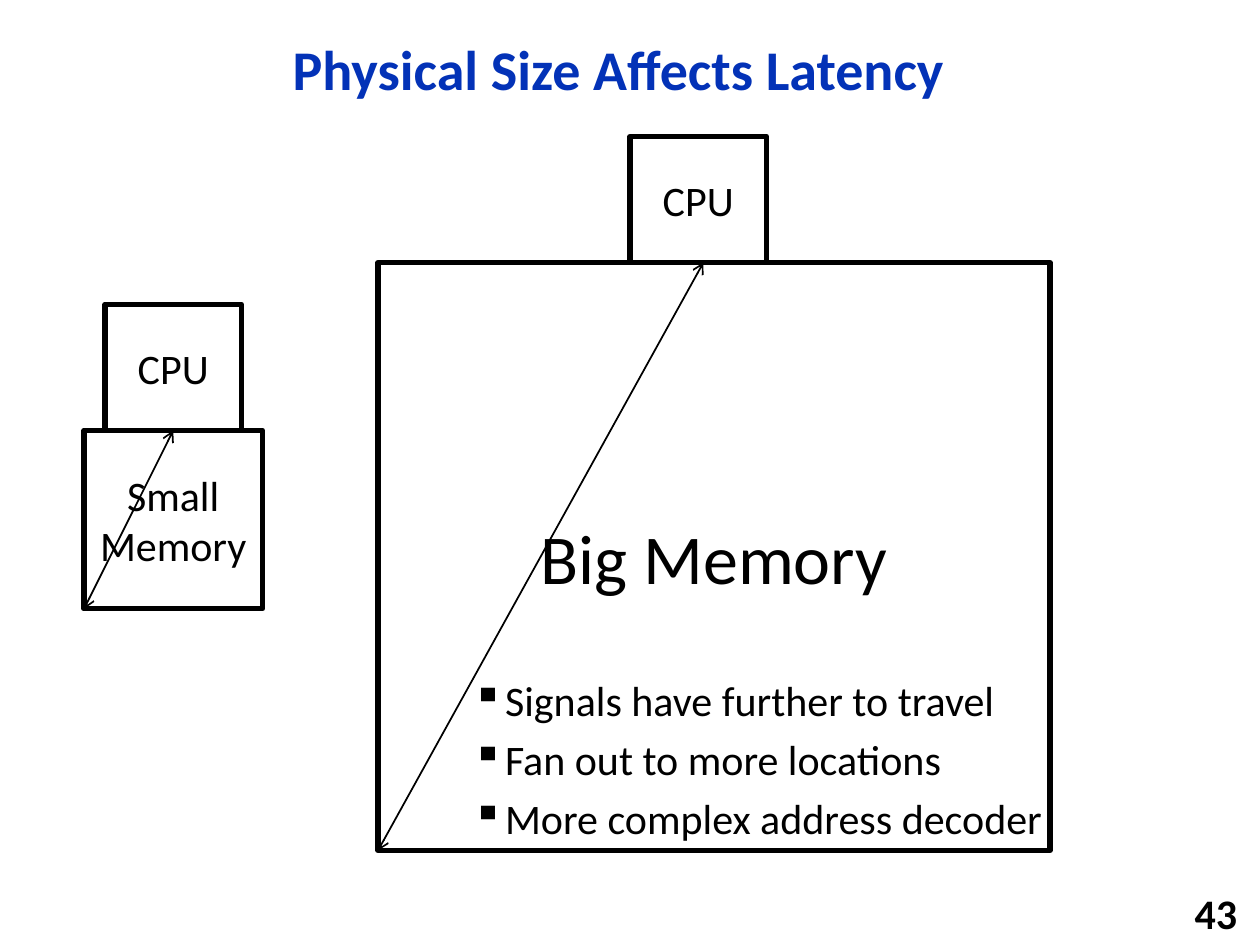
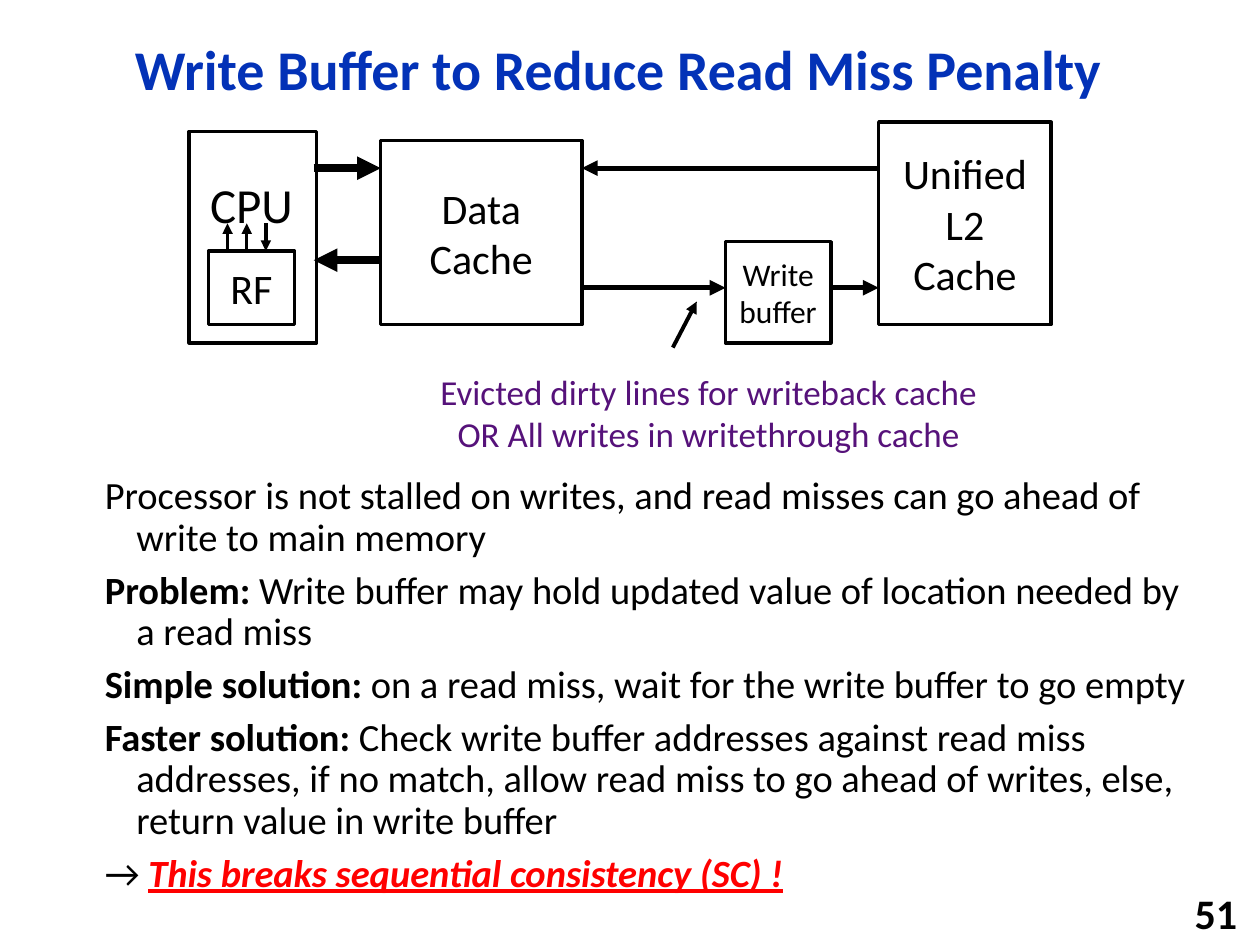
from dataclasses import dataclass

from lxml import etree
from pptx import Presentation
from pptx import util as u
from pptx.dml.color import RGBColor
from pptx.enum import shapes, text
from pptx.oxml.ns import qn


@dataclass(frozen=True)
class Theme:
    font: str = "Calibri"
    ink: str = "000000"
    paper: str = "FFFFFF"
    title: str = "0332B7"
    note: str = "56127A"
    alert: str = "FF0000"
    title_size: int = 32
    label_size: int = 24
    body_size: int = 22
    note_size: int = 20


@dataclass(frozen=True)
class Grid:
    """Maps columns and rows to lengths; origin and steps are in inches."""
    left: float
    top: float
    col: float
    row: float

    def point(self, col, row):
        return u.Inches(self.left + col * self.col), u.Inches(self.top + row * self.row)

    def box(self, col, row, cols, rows):
        return (*self.point(col, row), u.Inches(cols * self.col), u.Inches(rows * self.row))


THEME = Theme()
PAGE = Grid(0, 0, 1 / 12, 1 / 12)
DIAGRAM = Grid(1.35, 0.97, 0.076, 0.073)

CENTER, RIGHT = text.PP_ALIGN.CENTER, text.PP_ALIGN.RIGHT
TOP, MIDDLE = text.MSO_ANCHOR.TOP, text.MSO_ANCHOR.MIDDLE

READ_MISS_POINTS = [
    ("", "Processor is not stalled on writes, and read misses can go ahead of "
         "write to main memory"),
    ("Problem:", " Write buffer may hold updated value of location needed by a read miss"),
    ("Simple solution: ", "on a read miss, wait for the write buffer to go empty"),
    ("Faster solution:", " Check write buffer addresses against read miss addresses, "
                         "if no match, allow read miss to go ahead of writes, else, "
                         "return value in write buffer"),
]


def style(font, size, color=THEME.ink, bold=False):
    font.name = THEME.font
    font.size = u.Pt(size)
    font.bold = bold
    font.color.rgb = RGBColor.from_string(color)


def write(frame, content, size, color=THEME.ink, bold=False, align=None, anchor=TOP):
    """Fill a text frame, one paragraph for each line of content."""
    frame.text = content
    frame.word_wrap = True
    frame.auto_size = text.MSO_AUTO_SIZE.NONE
    frame.vertical_anchor = anchor
    for paragraph in frame.paragraphs:
        paragraph.alignment = align
        style(paragraph.font, size, color, bold)


def label(parent, place, content, size, **look):
    frame = parent.add_textbox(*place).text_frame
    write(frame, content, size, **look)
    return frame


def block(parent, place, content="", size=THEME.label_size, weight=2):
    """A white rectangle with a black outline and a centred name."""
    rect = parent.add_shape(shapes.MSO_SHAPE.RECTANGLE, *place)
    rect.shadow.inherit = False
    rect.fill.solid()
    rect.fill.fore_color.rgb = RGBColor.from_string(THEME.paper)
    rect.line.color.rgb = RGBColor.from_string(THEME.ink)
    rect.line.width = u.Pt(weight)
    write(rect.text_frame, content, size, align=CENTER, anchor=MIDDLE)


def arrow(parent, start, end, weight, tip="triangle", both_ends=False):
    line = parent.add_connector(shapes.MSO_CONNECTOR.STRAIGHT, *start, *end)
    line.line.color.rgb = RGBColor.from_string(THEME.ink)
    line.line.width = u.Pt(weight)
    properties = line._element.spPr
    outline = properties.find(qn("a:ln"))
    for name in ("a:headEnd", "a:tailEnd") if both_ends else ("a:tailEnd",):
        etree.SubElement(outline, qn(name), type=tip)
    etree.SubElement(properties, qn("a:effectLst"))


def hang(paragraph, indent, before, bullet=None):
    """Hanging indent in inches, space before in points, optional bullet."""
    paragraph.space_before = u.Pt(before)
    properties = paragraph._p.get_or_add_pPr()
    properties.set("marL", str(u.Inches(indent)))
    properties.set("indent", str(-u.Inches(indent)))
    if bullet:
        etree.SubElement(properties, qn("a:buChar"), char=bullet)
        # Bullets come before the default run properties in the schema.
        defaults = properties.find(qn("a:defRPr"))
        if defaults is not None:
            properties.append(defaults)


def titled_slide(deck, title, number):
    slide = deck.slides.add_slide(deck.slide_layouts[5])
    heading = slide.shapes.title
    heading.left, heading.top, heading.width, heading.height = PAGE.box(11, 2, 95.8, 9.8)
    write(heading.text_frame, title, THEME.title_size, THEME.title, True, CENTER, MIDDLE)
    heading.text_frame.paragraphs[0].line_spacing = 0.9
    label(slide.shapes, PAGE.box(94, 85, 25, 3.8), number, THEME.label_size,
          bold=True, align=RIGHT, anchor=MIDDLE)
    return slide


def memory_system(slide, name, size, memory, cpu_col, port_col):
    """A memory with a CPU on top and its longest signal run marked."""
    col, row, _, rows = memory
    group = slide.shapes.add_group_shape().shapes
    block(group, PAGE.box(*memory), name, size, weight=3)
    arrow(group, PAGE.point(col, row + rows), PAGE.point(port_col, row), 1,
          tip="arrow", both_ends=True)
    block(group, PAGE.box(cpu_col, row - 12, 13, 12), "CPU", weight=3)


def latency_slide(deck):
    slide = titled_slide(deck, "Physical Size Affects Latency", "43")
    memory_system(slide, "Small Memory", THEME.label_size, (8, 41, 17, 17), 10, 16.5)
    memory_system(slide, "Big Memory", 40, (36, 25, 64, 56), 60, 67)
    reasons = label(slide.shapes, PAGE.box(43.8, 63.6, 58.4, 17.4),
                    "Signals have further to travel\nFan out to more locations\n"
                    "More complex address decoder", THEME.label_size)
    for reason in reasons.paragraphs:
        hang(reason, 0.26, 5, bullet="▪")


def cache_diagram(slide):
    group = slide.shapes.add_group_shape().shapes
    block(group, DIAGRAM.box(2, 1, 13.3, 23))
    for place, name, size in [
        ((22, 2, 21, 20), "Data Cache", THEME.label_size),
        ((74, 0, 18, 22), "Unified L2 Cache", THEME.label_size),
        ((4, 14, 9, 8), "RF", THEME.label_size),
        ((58, 13, 11, 11), "Write\nbuffer", 18),
    ]:
        block(group, DIAGRAM.box(*place), name, size)
    label(group, DIAGRAM.box(2, 5, 13, 7), "CPU", 28, align=CENTER)
    for start, end, weight in [
        ((6, 14), (6, 11), 2),           # register file ports
        ((8, 14), (8, 11), 2),
        ((10, 11), (10, 14), 2),
        ((15, 5), (22, 5), 4.5),         # CPU and data cache
        ((22, 15), (15, 15), 4.5),
        ((74, 5), (43, 5), 3),           # refill from L2
        ((43, 18), (58, 18), 3),         # writes through the buffer
        ((69, 18), (74, 18), 3),
        ((52.5, 24.5), (55, 19.5), 2.25),  # pointer from the note
    ]:
        arrow(group, DIAGRAM.point(*start), DIAGRAM.point(*end), weight)


def write_buffer_slide(deck):
    slide = titled_slide(deck, "Write Buffer to Reduce Read Miss Penalty", "51")
    body = label(slide.shapes, PAGE.box(8.8, 44.8, 106.7, 44), "", THEME.body_size)
    for index, (lead, detail) in enumerate(READ_MISS_POINTS + [("", "→ ")]):
        point = body.add_paragraph() if index else body.paragraphs[0]
        style(point.font, THEME.body_size)
        point.line_spacing = 0.9
        hang(point, 0.25, 6.4)
        if lead:
            point.add_run().text = lead
            point.runs[0].font.bold = True
        point.add_run().text = detail
    warning = point.add_run()
    warning.text = "This breaks sequential consistency (SC) !"
    style(warning.font, THEME.body_size, THEME.alert, bold=True)
    warning.font.italic = warning.font.underline = True

    label(slide.shapes, PAGE.box(32, 34.7, 71, 9.2),
          "Evicted dirty lines for writeback cache\nOR All writes in writethrough cache",
          THEME.note_size, color=THEME.note, align=CENTER)
    cache_diagram(slide)


def main():
    deck = Presentation()
    deck.slide_width, deck.slide_height = u.Inches(10), u.Inches(7.5)
    latency_slide(deck)
    write_buffer_slide(deck)
    deck.save("out.pptx")


if __name__ == "__main__":
    main()
